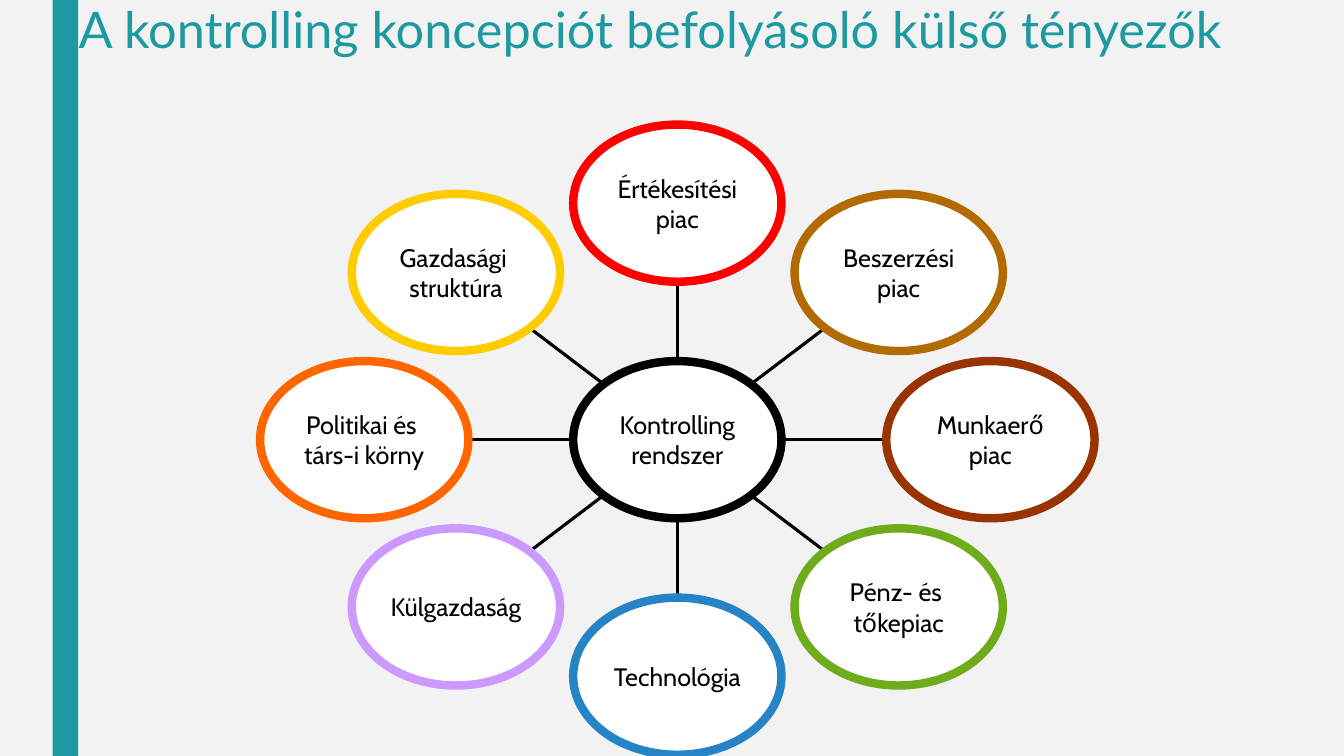
from math import cos, radians, sin

from lxml.etree import SubElement
from pptx import Presentation
from pptx.dml.color import RGBColor
from pptx.enum.shapes import MSO_CONNECTOR as CONN, MSO_SHAPE as SHAPE
from pptx.enum.text import MSO_ANCHOR as ANCHOR, MSO_AUTO_SIZE as AUTO, PP_ALIGN as ALIGN
from pptx.oxml.ns import qn
from pptx.util import Cm, Pt

COLORS = {
    "background": "F2F2F2", "teal": "1D9AA1", "black": "000000", "white": "FFFFFF",
    "red": "FF0000", "ochre": "B26B02", "brown": "993300", "green": "6EAC1C",
    "blue": "2683C6", "lilac": "CC99FF", "orange": "FF6600", "yellow": "FFCC00",
}
FACTORS = [
    (["Értékesítési", "piac"], "red"),
    (["Beszerzési", "piac"], "ochre"),
    (["Munkaerő", "piac"], "brown"),
    (["Pénz- és ", "tőkepiac"], "green"),
    (["Technológia"], "blue"),
    (["Külgazdaság"], "lilac"),
    (["Politikai és ", "társ-i körny"], "orange"),
    (["Gazdasági ", "struktúra"], "yellow"),
]
CENTER_X, CENTER_Y = 17.07, 11.08
RING_X, RING_Y = 7.89, 5.96
OVAL_W, OVAL_H = 5.25, 3.96


def rgb(name):
    """Return the named colour."""
    return RGBColor.from_string(COLORS[name])


class Deck:
    """Holds the slide style and the current slide."""

    def __init__(self, prs):
        """Add a title-only slide with a plain background."""
        self.title_font, self.body_font = "Lato", "Cabin"
        self.s = prs.slides.add_slide(prs.slide_layouts[5])
        fill = self.s.background.fill
        fill.solid()
        fill.fore_color.rgb = rgb("background")

    def run(self, p, text, font, size, color):
        """Add one formatted run to a paragraph."""
        r = p.add_run()
        r.text = text
        r.font.name, r.font.size = font, Pt(size)
        r.font.color.rgb = rgb(color)

    def title(self, text, x, y, w, h):
        """Place and format the title placeholder."""
        sp = self.s.shapes.title
        sp.left, sp.top, sp.width, sp.height = Cm(x), Cm(y), Cm(w), Cm(h)
        tf = sp.text_frame
        tf.auto_size, tf.vertical_anchor = AUTO.NONE, ANCHOR.TOP
        p = tf.paragraphs[0]
        p.alignment, p.line_spacing = ALIGN.LEFT, 0.89
        self.run(p, text, self.title_font, 36, "teal")

    def shape(self, kind, x, y, w, h, fill):
        """Add a filled preset shape without outline."""
        sp = self.s.shapes.add_shape(kind, Cm(x), Cm(y), Cm(w), Cm(h))
        sp.shadow.inherit = False
        sp.fill.solid()
        sp.fill.fore_color.rgb = rgb(fill)
        sp.line.fill.background()
        return sp

    def oval(self, lines, x, y, color):
        """Add a labelled oval centred on a point."""
        sp = self.shape(SHAPE.OVAL, x - OVAL_W / 2, y - OVAL_H / 2, OVAL_W, OVAL_H, "white")
        sp.line.color.rgb = rgb(color)
        sp.line.width = Pt(6)
        tf = sp.text_frame
        tf.word_wrap, tf.vertical_anchor = False, ANCHOR.MIDDLE
        for i, text in enumerate(lines):
            p = tf.add_paragraph() if i else tf.paragraphs[0]
            p.alignment = ALIGN.CENTER
            self.run(p, text, self.body_font, 18, "black")

    def spoke(self, x1, y1, x2, y2):
        """Add a straight black line."""
        line = self.s.shapes.add_connector(CONN.STRAIGHT, Cm(x1), Cm(y1), Cm(x2), Cm(y2))
        line.line.color.rgb = rgb("black")
        line.line.width = Pt(2.25)
        SubElement(line._element.spPr, qn("a:effectLst"))


def main():
    """Build and save the slide."""
    prs = Presentation()
    prs.slide_width, prs.slide_height = Cm(33.87), Cm(19.05)
    deck = Deck(prs)
    deck.shape(SHAPE.RECTANGLE, 1.33, 0, 0.64, 19.05, "teal")
    deck.title("A kontrolling koncepciót befolyásoló külső tényezők", 1.73, 0, 30.48, 3.18)
    for i, (lines, color) in enumerate(FACTORS):
        angle = radians(360 / len(FACTORS) * i)
        dx, dy = sin(angle), -cos(angle)
        x, y = CENTER_X + RING_X * dx, CENTER_Y + RING_Y * dy
        edge_x, edge_y = OVAL_W / 2 * dx, OVAL_H / 2 * dy
        deck.spoke(CENTER_X + edge_x, CENTER_Y + edge_y, x - edge_x, y - edge_y)
        deck.oval(lines, x, y, color)
    deck.oval(["Kontrolling", "rendszer"], CENTER_X, CENTER_Y, "black")
    prs.save("out.pptx")


if __name__ == "__main__":
    main()
